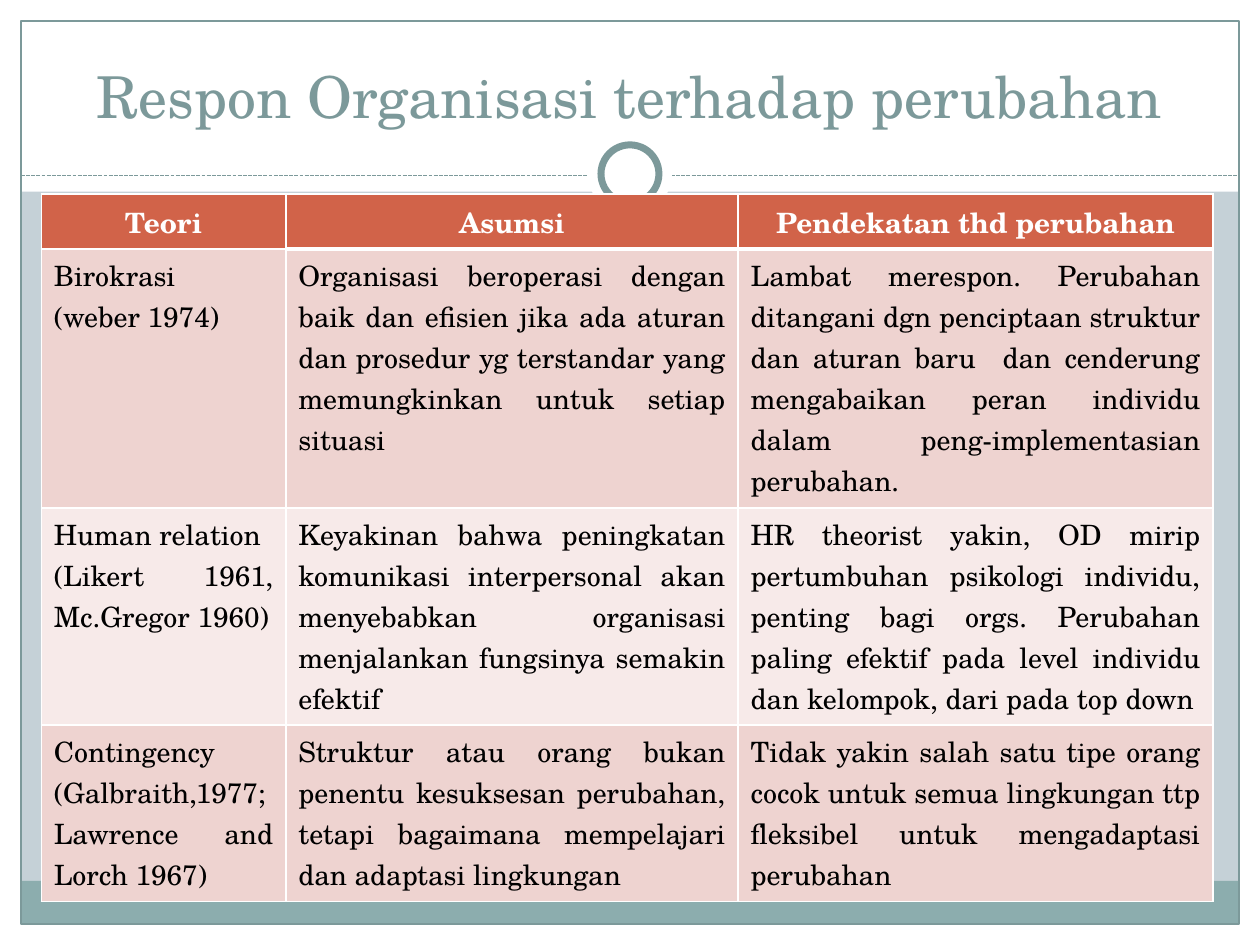
from lxml import etree
from pptx import Presentation
from pptx.dml.color import RGBColor
from pptx.enum import dml, shapes, text
from pptx.oxml import ns
from pptx.util import Pt

FONT = "TeX Gyre Schola"
WHITE = RGBColor(0xFF, 0xFF, 0xFF)
BLACK = RGBColor(0x00, 0x00, 0x00)
BACKDROP = RGBColor(0xC5, 0xD1, 0xD7)
FOOT_BAND = RGBColor(0x8C, 0xAD, 0xAE)
TEAL = RGBColor(0x7C, 0x99, 0x9A)
HEADER = RGBColor(0xD1, 0x63, 0x49)
ROW_DARK = RGBColor(0xEE, 0xD3, 0xD0)
ROW_LIGHT = RGBColor(0xF7, 0xEA, 0xE9)

WIDTH, HEIGHT = 720, 540
MARGIN = 12
RULE_Y = 100.5

COLUMN_WIDTHS = [139.7, 258.5, 271.4]
ROW_HEIGHTS = [31.4, 148, 124, 101]
HEADINGS = ["Teori", "Asumsi", "Pendekatan thd perubahan"]
THEORIES = [
    ["Birokrasi\n(weber 1974)",
     "Organisasi beroperasi dengan baik dan efisien jika ada aturan dan "
     "prosedur yg terstandar yang memungkinkan untuk setiap situasi",
     "Lambat merespon. Perubahan ditangani dgn penciptaan struktur dan aturan "
     "baru  dan cenderung mengabaikan peran individu dalam "
     "peng-implementasian perubahan."],
    ["Human relation\n(Likert 1961, Mc.Gregor 1960)",
     "Keyakinan bahwa peningkatan komunikasi interpersonal akan menyebabkan "
     "organisasi menjalankan fungsinya semakin efektif",
     "HR theorist yakin, OD mirip pertumbuhan psikologi individu, penting bagi "
     "orgs. Perubahan paling efektif pada level individu dan kelompok, dari "
     "pada top down"],
    ["Contingency (Galbraith,1977; Lawrence and Lorch 1967)",
     "Struktur atau orang bukan penentu kesuksesan perubahan, tetapi bagaimana "
     "mempelajari dan adaptasi lingkungan",
     "Tidak yakin salah satu tipe orang cocok untuk semua lingkungan ttp "
     "fleksibel untuk mengadaptasi perubahan"],
]


def add_panel(slide, box, fill=None, line=None, weight=0.75,
              kind=shapes.MSO_SHAPE.RECTANGLE):
    panel = slide.shapes.add_shape(kind, *[Pt(v) for v in box])
    panel.shadow.inherit = False
    if fill is None:
        panel.fill.background()
    else:
        panel.fill.solid()
        panel.fill.fore_color.rgb = fill
    if line is None:
        panel.line.fill.background()
    else:
        panel.line.color.rgb = line
        panel.line.width = Pt(weight)


def add_ring_disc(slide, diameter, **style):
    top = RULE_Y - 1.15 - diameter / 2
    add_panel(slide, ((WIDTH - diameter) / 2, top, diameter, diameter),
              WHITE, kind=shapes.MSO_SHAPE.OVAL, **style)


def add_dashed_rule(slide):
    rule = slide.shapes.add_connector(
        shapes.MSO_CONNECTOR.STRAIGHT,
        Pt(MARGIN), Pt(RULE_Y), Pt(WIDTH - MARGIN), Pt(RULE_Y))
    rule.line.color.rgb = TEAL
    rule.line.width = Pt(0.75)
    rule.line.dash_style = dml.MSO_LINE.SQUARE_DOT
    etree.SubElement(rule._element.spPr, ns.qn("a:effectLst"))


def write_text(frame, wording, align, color, **font_format):
    frame.text = wording
    for paragraph in frame.paragraphs:
        paragraph.alignment = align
        for run in paragraph.runs:
            run.font.color.rgb = color
            for name, value in {"name": FONT, **font_format}.items():
                setattr(run.font, name, value)


def add_title(slide, wording):
    title = slide.shapes.add_textbox(Pt(23.7), Pt(18), Pt(672), Pt(59.8))
    title.text_frame.word_wrap = True
    title.text_frame.vertical_anchor = text.MSO_ANCHOR.BOTTOM
    write_text(title.text_frame, wording, text.PP_ALIGN.CENTER, TEAL,
               size=Pt(33))


def set_borders(cell, **weights):
    properties = cell._tc.get_or_add_tcPr()
    for position, side in enumerate("LRTB"):
        border = etree.Element(ns.qn(f"a:ln{side}"),
                               w=str(Pt(weights.get(side, 1))))
        fill = etree.SubElement(border, ns.qn("a:solidFill"))
        etree.SubElement(fill, ns.qn("a:srgbClr"), val=str(WHITE))
        properties.insert(position, border)


def fill_cell(cell, wording, fill, align, color, bold):
    cell.fill.solid()
    cell.fill.fore_color.rgb = fill
    write_text(cell.text_frame, wording, align, color, size=Pt(16), bold=bold)


def add_theory_table(slide):
    table = slide.shapes.add_table(
        len(ROW_HEIGHTS), len(COLUMN_WIDTHS), Pt(23.6), Pt(110.9),
        Pt(sum(COLUMN_WIDTHS)), Pt(sum(ROW_HEIGHTS))).table
    for column, width in zip(table.columns, COLUMN_WIDTHS):
        column.width = Pt(width)
    for row, height in zip(table.rows, ROW_HEIGHTS):
        row.height = Pt(height)

    # Heading row, with a thick rule under the last two columns
    for index, heading in enumerate(HEADINGS):
        cell = table.cell(0, index)
        fill_cell(cell, heading, HEADER, text.PP_ALIGN.CENTER, WHITE, True)
        set_borders(cell, B=3 if index else 1)

    # One row per theory, in alternating tints
    for number, theory in enumerate(THEORIES, start=1):
        tint = ROW_DARK if number % 2 else ROW_LIGHT
        for index, wording in enumerate(theory):
            cell = table.cell(number, index)
            fill_cell(cell, wording, tint, text.PP_ALIGN.JUSTIFY, BLACK, False)
            set_borders(cell, T=3 if number == 1 and index else 1)


def main():
    deck = Presentation()
    deck.slide_width, deck.slide_height = Pt(WIDTH), Pt(HEIGHT)
    slide = deck.slides.add_slide(deck.slide_layouts[6])
    slide.background.fill.solid()
    slide.background.fill.fore_color.rgb = BACKDROP

    # White margins and heading area
    inner_width, inner_height = WIDTH - 2 * MARGIN, HEIGHT - 2 * MARGIN
    for box in [(0, HEIGHT - MARGIN, WIDTH, MARGIN),
                (0, 0, WIDTH, 109.5),
                (0, 0, MARGIN, HEIGHT),
                (WIDTH - MARGIN, 0, MARGIN, HEIGHT)]:
        add_panel(slide, box, WHITE)

    # Foot band, frame and dashed rule with its ring
    add_panel(slide, (MARGIN, 503.3, inner_width, 24.45), FOOT_BAND)
    add_panel(slide, (MARGIN, MARGIN, inner_width, inner_height), line=TEAL)
    add_dashed_rule(slide)
    add_ring_disc(slide, 48)
    add_ring_disc(slide, 33.1, line=TEAL, weight=4)

    # Content
    add_title(slide, "Respon Organisasi terhadap perubahan")
    add_theory_table(slide)
    deck.save("out.pptx")


if __name__ == "__main__":
    main()
